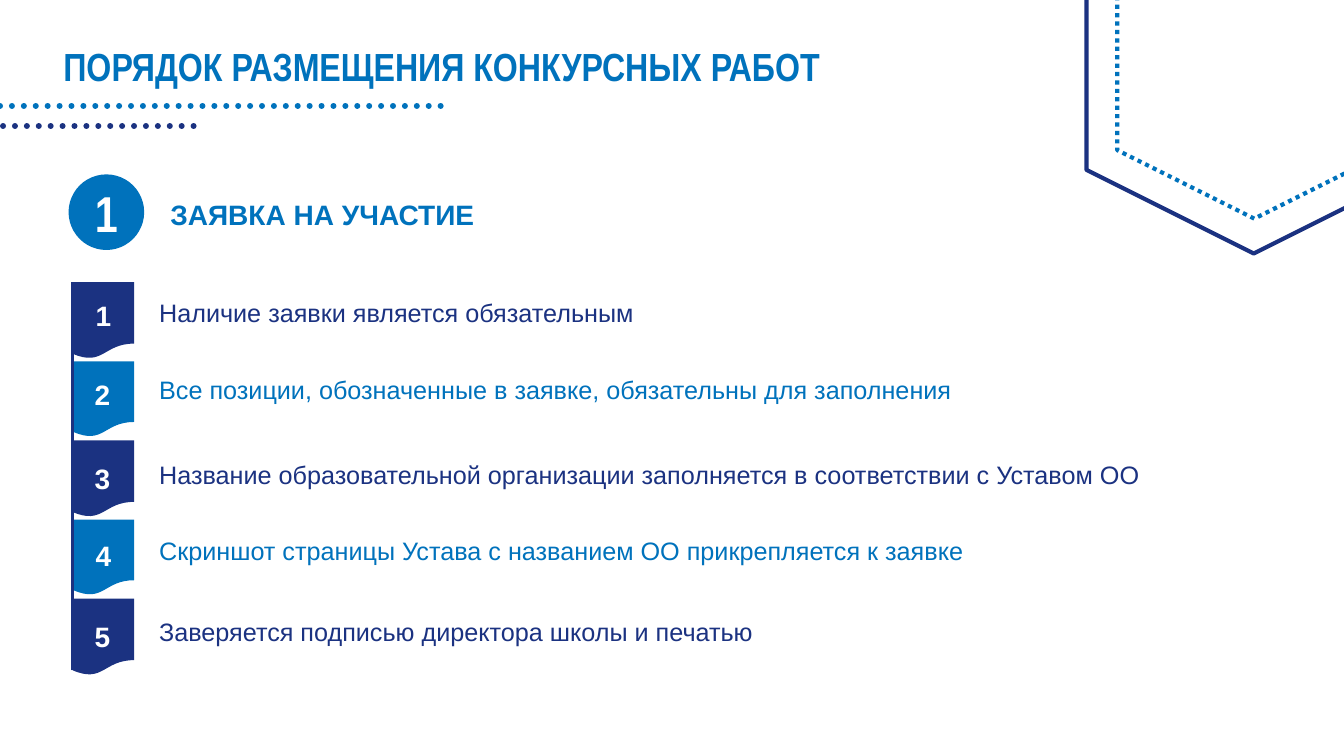
from dataclasses import dataclass

from lxml.etree import SubElement
from pptx import Presentation
from pptx.dml.color import RGBColor
from pptx.enum.dml import MSO_LINE
from pptx.enum.shapes import MSO_CONNECTOR, MSO_SHAPE
from pptx.enum.text import MSO_AUTO_SIZE, PP_ALIGN
from pptx.oxml.ns import qn
from pptx.shapes.autoshape import Shape
from pptx.slide import Slide
from pptx.util import Inches, Pt

NAVY = RGBColor(0x1B, 0x32, 0x81)
BLUE = RGBColor(0x00, 0x72, 0xBC)
WHITE = RGBColor(0xFF, 0xFF, 0xFF)

BODY_FONT = "Arial"
DISPLAY_FONT = "Arial Narrow"

FIRST_BADGE_TOP = 2.8
BADGE_PITCH = 0.785
BADGE_RIGHT = 1.33


@dataclass(frozen=True)
class Box:
    left: float
    top: float
    width: float
    height: float

    def lengths(self) -> list[int]:
        return [Inches(v) for v in (self.left, self.top, self.width, self.height)]


@dataclass(frozen=True)
class Style:
    size: float
    color: RGBColor
    bold: bool = False
    font: str = BODY_FONT
    centered: bool = False
    wrap: bool = True
    space_after: float = 0


@dataclass(frozen=True)
class Requirement:
    text: str
    text_top: float
    number_left: float
    number_top: float
    text_width: float = 10.11


@dataclass(frozen=True)
class Rule:
    start: tuple[float, float]
    end: tuple[float, float]
    color: RGBColor
    weight: float
    dotted: bool = False


REQUIREMENTS = [
    Requirement("Наличие заявки является обязательным", 2.9, 0.78, 2.91, 5.49),
    Requirement("Все позиции, обозначенные в заявке, обязательны для заполнения",
                3.66, 0.77, 3.7),
    Requirement("Название образовательной организации заполняется в соответствии с Уставом ОО",
                4.51, 0.77, 4.53),
    Requirement("Скриншот страницы Устава с названием ОО прикрепляется к заявке",
                5.26, 0.78, 5.29),
    Requirement("Заверяется подписью директора школы и печатью", 6.07, 0.77, 6.1, 6.15),
]

SPINE = Rule((0.72, 6.65), (0.72, 2.8), NAVY, 1.75)
TITLE_RULES = [
    Rule((0.03, 1.25), (1.96, 1.25), NAVY, 4.25, dotted=True),
    Rule((0, 1.05), (4.42, 1.05), BLUE, 4.25, dotted=True),
]


def add_text(slide: Slide, text: str, box: Box, style: Style) -> None:
    frame = slide.shapes.add_textbox(*box.lengths()).text_frame
    frame.word_wrap = style.wrap
    frame.auto_size = MSO_AUTO_SIZE.SHAPE_TO_FIT_TEXT
    paragraph = frame.paragraphs[0]
    paragraph.alignment = PP_ALIGN.CENTER if style.centered else PP_ALIGN.LEFT
    paragraph.space_after = Pt(style.space_after)
    run = paragraph.add_run()
    run.text = text
    run.font.name = style.font
    run.font.size = Pt(style.size)
    run.font.bold = style.bold
    run.font.color.rgb = style.color


def add_filled(slide: Slide, kind: MSO_SHAPE, box: Box, color: RGBColor) -> None:
    shape = slide.shapes.add_shape(kind, *box.lengths())
    shape.shadow.inherit = False
    shape.fill.solid()
    shape.fill.fore_color.rgb = color
    shape.line.fill.background()


def add_hexagon(slide: Slide, box: Box, color: RGBColor) -> Shape:
    """Outline a hexagon that stands on its point."""
    hexagon = slide.shapes.add_shape(MSO_SHAPE.HEXAGON, *box.lengths())
    hexagon.rotation = 90
    hexagon.shadow.inherit = False
    hexagon.fill.background()
    hexagon.line.color.rgb = color
    hexagon.line.width = Pt(3)
    return hexagon


def add_rule(slide: Slide, rule: Rule) -> None:
    ends = [Inches(v) for v in (*rule.start, *rule.end)]
    connector = slide.shapes.add_connector(MSO_CONNECTOR.STRAIGHT, *ends)
    connector.line.color.rgb = rule.color
    connector.line.width = Pt(rule.weight)
    properties = connector._element.spPr
    if rule.dotted:
        connector.line.dash_style = MSO_LINE.ROUND_DOT
        properties.find(qn("a:ln")).set("cap", "rnd")
    SubElement(properties, qn("a:effectLst"))


def add_requirements(slide: Slide) -> None:
    number_style = Style(20, WHITE, bold=True, centered=True)
    for index, item in enumerate(REQUIREMENTS):
        is_odd = index % 2 == 0
        color = NAVY if is_odd else BLUE
        width, height = (0.61, 0.76) if is_odd else (0.6, 0.75)
        top = FIRST_BADGE_TOP + index * BADGE_PITCH
        add_filled(slide, MSO_SHAPE.FLOWCHART_DOCUMENT,
                   Box(BADGE_RIGHT - width, top, width, height), color)
        add_text(slide, str(index + 1),
                 Box(item.number_left, item.number_top, 0.49, 0.44), number_style)
        add_text(slide, item.text, Box(1.48, item.text_top, item.text_width, 0.4),
                 Style(18, color, space_after=8))
    add_rule(slide, SPINE)


def add_heading(slide: Slide) -> None:
    add_text(slide, "ПОРЯДОК РАЗМЕЩЕНИЯ КОНКУРСНЫХ РАБОТ", Box(0.53, 0.37, 7.88, 0.57),
             Style(28, BLUE, bold=True, font=DISPLAY_FONT, wrap=False))
    for rule in TITLE_RULES:
        add_rule(slide, rule)
    add_text(slide, "ЗАЯВКА НА УЧАСТИЕ", Box(1.59, 1.91, 3.25, 0.44),
             Style(20, BLUE, bold=True, wrap=False, space_after=8))
    add_filled(slide, MSO_SHAPE.OVAL, Box(0.68, 1.73, 0.75, 0.75), BLUE)
    add_text(slide, "1", Box(0.72, 1.76, 0.67, 0.71),
             Style(36, WHITE, bold=True, font=DISPLAY_FONT, centered=True))


def main() -> None:
    deck = Presentation()
    deck.slide_width = Inches(13.33)
    deck.slide_height = Inches(7.5)
    slide = deck.slides.add_slide(deck.slide_layouts[6])
    add_requirements(slide)
    add_heading(slide)
    add_hexagon(slide, Box(10.51, -1.07, 3.85, 3.32), NAVY)
    inner_hexagon = add_hexagon(slide, Box(10.86, -0.77, 3.16, 2.72), BLUE)
    inner_hexagon.line.dash_style = MSO_LINE.ROUND_DOT
    deck.save("out.pptx")


if __name__ == "__main__":
    main()
